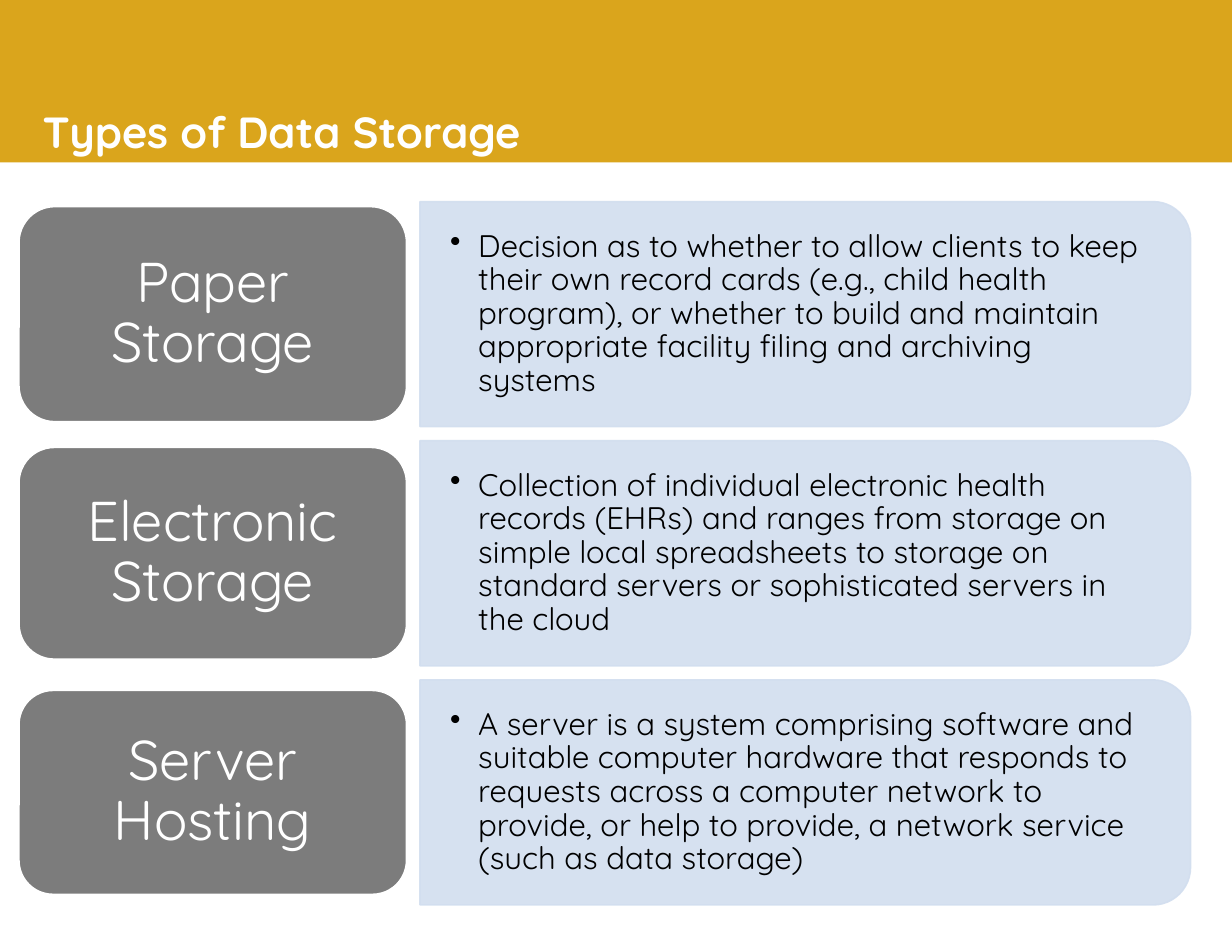
from lxml import etree
from pptx import Presentation
from pptx.dml.color import RGBColor
from pptx.enum.shapes import MSO_SHAPE
from pptx.enum.text import MSO_ANCHOR, PP_ALIGN
from pptx.oxml.ns import qn
from pptx.util import Inches, Pt

LEFT, CENTER = PP_ALIGN.LEFT, PP_ALIGN.CENTER
MIDDLE = MSO_ANCHOR.MIDDLE
RECTANGLE = MSO_SHAPE.RECTANGLE
CARD = MSO_SHAPE.ROUNDED_RECTANGLE
PANEL = MSO_SHAPE.ROUND_2_SAME_RECTANGLE

GOLD = RGBColor(0xDA, 0xA5, 0x1C)
GRAY = RGBColor(0x7C, 0x7C, 0x7C)
PALE_BLUE = RGBColor(0xD2, 0xDE, 0xEF)
WHITE = RGBColor(0xFF, 0xFF, 0xFF)
BLACK = RGBColor(0x00, 0x00, 0x00)
FONT = "Quicksand"

TITLE_ONLY = 5
ROW_LEFT, ROW_TOP, ROW_WIDTH, ROW_HEIGHT, ROW_PITCH = 0.17, 1.8, 10.46, 2.01, 2.135
CARD_WIDTH, PANEL_WIDTH = 3.46, 6.88

# Storage type, height of its card, description
STORAGE_TYPES = [
    ("Paper Storage", 1.92,
     "Decision as to whether to allow clients to keep their own record cards "
     "(e.g., child health program), or whether to build and maintain "
     "appropriate facility filing and archiving systems"),
    ("Electronic Storage", 1.89,
     "Collection of individual electronic health records (EHRs) and ranges "
     "from storage on simple local spreadsheets to storage on standard servers "
     "or sophisticated servers in the cloud"),
    ("Server Hosting", 1.82,
     "A server is a system comprising software and suitable computer hardware "
     "that responds to requests across a computer network to provide, or help "
     "to provide, a network service (such as data storage)"),
]


def add_filled_shape(slide, kind, left, top, width, height, fill, line=None):
    shape = slide.shapes.add_shape(
        kind, Inches(left), Inches(top), Inches(width), Inches(height))
    shape.shadow.inherit = False
    shape.fill.solid()
    shape.fill.fore_color.rgb = fill
    if line is None:
        shape.line.fill.background()
    else:
        shape.line.color.rgb = line
        shape.line.width = Pt(1)
    return shape


def set_text(shape, text, size, color, align, inset_x, inset_y, bold=False):
    frame = shape.text_frame
    frame.word_wrap = True
    frame.vertical_anchor = MIDDLE
    frame.margin_left = frame.margin_right = Inches(inset_x)
    frame.margin_top = frame.margin_bottom = Inches(inset_y)
    frame.text = text
    paragraph = frame.paragraphs[0]
    paragraph.alignment = align
    paragraph.line_spacing = 0.9
    paragraph.font.name = FONT
    paragraph.font.size = Pt(size)
    paragraph.font.bold = bold
    paragraph.font.color.rgb = color
    return paragraph


def set_opacity(shape, percent):
    """Apply the opacity to both fill and outline."""
    for color in shape.element.spPr.iter(qn("a:srgbClr")):
        etree.SubElement(color, qn("a:alpha"), val=str(percent * 1000))


def add_bullet(paragraph, indent):
    properties = paragraph._p.get_or_add_pPr()
    properties.set("marL", str(Inches(indent)))
    properties.set("indent", str(-Inches(indent)))
    bullet = etree.Element(qn("a:buChar"), char="•")
    properties.find(qn("a:defRPr")).addprevious(bullet)


def add_header(slide, left, top, width, height):
    band = add_filled_shape(slide, RECTANGLE, left, top, width, height, GOLD)
    title = slide.shapes.title
    title.element.addprevious(band.element)
    title.left, title.top = Inches(left + 0.43), Inches(top + 1.02)
    title.width, title.height = Inches(10.35), Inches(0.74)
    set_text(title, "Types of Data Storage", 28, WHITE, LEFT, 0.1, 0.05, bold=True)


def add_panel(slide, left, top, width, height, description):
    # Drawn upright and turned a quarter, so its rounded corners face right
    panel = add_filled_shape(
        slide, PANEL, left + (width - height) / 2, top + (height - width) / 2,
        height, width, PALE_BLUE, PALE_BLUE)
    panel.rotation = 90
    set_opacity(panel, 90)
    text_box = slide.shapes.add_textbox(
        Inches(left), Inches(top + 0.1), Inches(width - 0.1), Inches(height - 0.2))
    paragraph = set_text(text_box, description, 20, BLACK, LEFT, 0.27, 0.14)
    add_bullet(paragraph, 0.25)


def add_storage_row(slide, left, top, width, height, name, card_height, description):
    add_panel(slide, left + width - PANEL_WIDTH, top, PANEL_WIDTH, height, description)
    card = add_filled_shape(
        slide, CARD, left, top + (height - card_height) / 2,
        CARD_WIDTH, card_height, GRAY, WHITE)
    set_text(card, name, 36, WHITE, CENTER, 0.15, 0.07)


def main():
    presentation = Presentation()
    presentation.slide_width = Inches(11)
    presentation.slide_height = Inches(8.5)
    slide = presentation.slides.add_slide(presentation.slide_layouts[TITLE_ONLY])
    add_header(slide, -0.15, -0.19, 11.3, 1.64)
    for index, storage_type in enumerate(STORAGE_TYPES):
        add_storage_row(slide, ROW_LEFT, ROW_TOP + index * ROW_PITCH,
                        ROW_WIDTH, ROW_HEIGHT, *storage_type)
    presentation.save("out.pptx")


if __name__ == "__main__":
    main()
